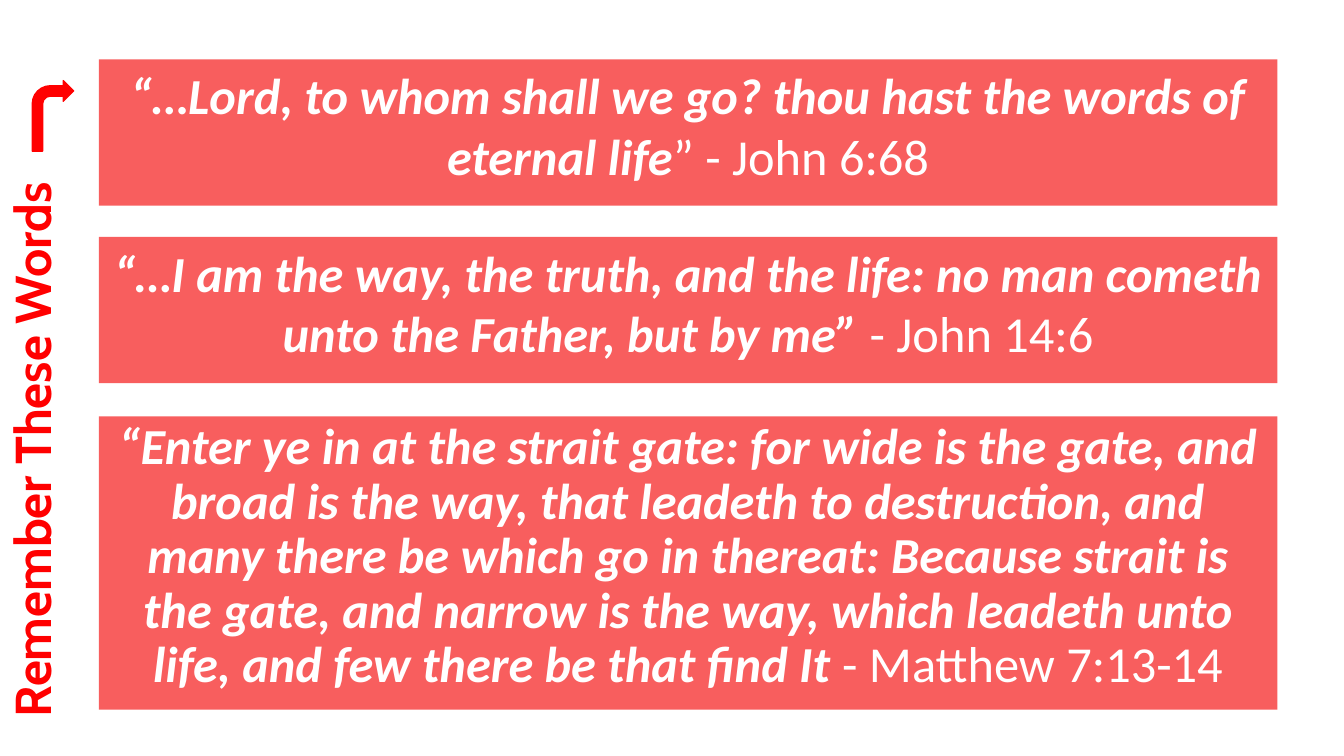
from pptx import Presentation
from pptx.dml.color import RGBColor
from pptx.enum.shapes import MSO_SHAPE
from pptx.enum.text import MSO_ANCHOR, MSO_AUTO_SIZE, PP_ALIGN
from pptx.util import Inches, Pt

RECT, BENT = MSO_SHAPE.RECTANGLE, MSO_SHAPE.BENT_ARROW
TOP, CENTER = MSO_ANCHOR.TOP, PP_ALIGN.CENTER
GROW = MSO_AUTO_SIZE.SHAPE_TO_FIT_TEXT

CORAL, RED, WHITE = "F85E5E", "FF0000", "FFFFFF"
TITLE = "Remember These Words"
VERSES = [
    (0.59, 1.45, 1.0,
     "“…Lord, to whom shall we go? thou hast the words of eternal life",
     "” - John 6:68"),
    (2.35, 1.45, 1.0,
     "“…I am the way, the truth, and the life: no man cometh unto the "
     "Father, but by me” ",
     "- John 14:6"),
    (4.13, 2.91, 0.9,
     "“Enter ye in at the strait gate: for wide is the gate, and broad is "
     "the way, that leadeth to destruction, and many there be which go in "
     "thereat: Because strait is the gate, and narrow is the way, which "
     "leadeth unto life, and few there be that find It ",
     "- Matthew 7:13-14"),
]
LEFT, WIDTH = 0.98, 11.69


def color(code):
    return RGBColor.from_string(code)


def write(para, text, font="Calibri", size=36, ink=WHITE, bold=False,
          slant=False):
    run = para.add_run()
    run.text = text
    face = run.font
    face.name, face.size = font, Pt(size)
    face.bold, face.italic = bold, slant
    face.color.rgb = color(ink)


def draw(slide, kind, box, fill):
    shape = slide.shapes.add_shape(kind, *map(Inches, box))
    shape.shadow.inherit = False
    shape.fill.solid()
    shape.fill.fore_color.rgb = color(fill)
    shape.line.fill.background()
    return shape


def main():
    deck = Presentation()
    deck.slide_width, deck.slide_height = Inches(13.33), Inches(7.5)
    slide = deck.slides.add_slide(deck.slide_layouts[6])

    for top, height, space, quote, source in VERSES:
        panel = draw(slide, RECT, (LEFT, top, WIDTH, height), CORAL)
        frame = panel.text_frame
        frame.word_wrap = True
        frame.vertical_anchor = TOP
        para = frame.paragraphs[0]
        para.alignment = CENTER
        para.line_spacing = space
        para.space_before = Pt(6)
        write(para, quote, bold=True, slant=True)
        write(para, source)

    title = slide.shapes.add_textbox(
        Inches(-2.66), Inches(4.11), Inches(5.96), Inches(0.71))
    title.rotation = 270
    frame = title.text_frame
    frame.word_wrap = False
    frame.auto_size = GROW
    para = frame.paragraphs[0]
    para.alignment = CENTER
    write(para, TITLE, font="Cabin", ink=RED, bold=True)

    arrow = draw(slide, BENT, (0.32, 0.8, 0.41, 0.7), RED)
    arrow.line.color.rgb = color(RED)
    arrow.line.width = Pt(1)

    deck.save("out.pptx")


if __name__ == "__main__":
    main()
